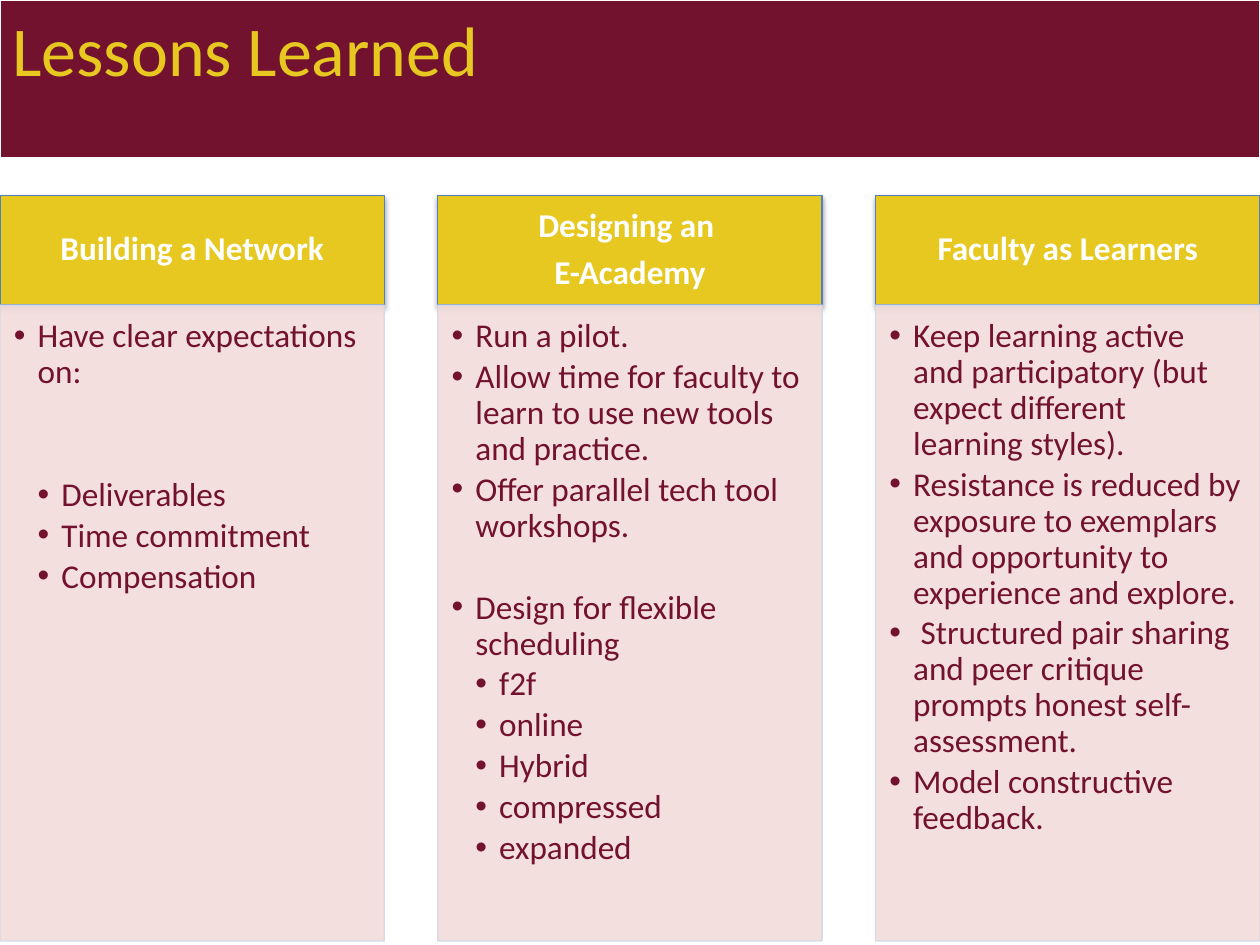
from lxml.etree import SubElement
from pptx import Presentation
from pptx.dml.color import RGBColor as RGB
from pptx.enum.shapes import MSO_SHAPE as Shape
from pptx.enum.text import MSO_ANCHOR as Anchor, PP_ALIGN as Align
from pptx.oxml.ns import qn
from pptx.util import Cm, Pt

TITLE = "Lessons Learned"
# Each point: (level, text, blank lines of space above it)
COLUMNS = [
    (["Building a Network"], [
        (1, "Have clear expectations on:", 0),
        (2, "Deliverables", 2),
        (2, "Time commitment", 0),
        (2, "Compensation", 0),
    ]),
    (["Designing an ", "E-Academy"], [
        (1, "Run a pilot.", 0),
        (1, "Allow time for faculty to learn to use new tools and practice.", 0),
        (1, "Offer parallel tech tool workshops.", 0),
        (1, "Design for flexible scheduling", 1),
        (2, "f2f", 0),
        (2, "online", 0),
        (2, "Hybrid", 0),
        (2, "compressed", 0),
        (2, "expanded", 0),
    ]),
    (["Faculty as Learners"], [
        (1, "Keep learning active and participatory "
            "(but expect different learning styles).", 0),
        (1, "Resistance is reduced by exposure to exemplars "
            "and opportunity to experience and explore.", 0),
        (1, " Structured pair sharing and peer critique "
            "prompts honest self-assessment.", 0),
        (1, "Model constructive feedback.", 0),
    ]),
]
COLORS = {"wine": "73122E", "gold": "E6C820", "pink": "F2DCDB",
          "blue": "4F81BD", "pale": "D0D8E8", "white": "FFFFFF"}
FONT = "Calibri"
WIDE, HIGH = 25.4, 19.05
COL_W, HEAD_TOP, HEAD_H, BODY_H = 7.75, 3.94, 2.21, 12.82
INDENT = 0.48
SIZE, ROW = 19, 23.4


def color(name):
    return RGB.from_string(COLORS[name])


def add_box(slide, place, fill, line, pads, anchor=Anchor.TOP):
    box = slide.shapes.add_shape(Shape.RECTANGLE, *map(Cm, place))
    box.shadow.inherit = False
    box.fill.solid()
    box.fill.fore_color.rgb = color(fill)
    box.line.color.rgb = color(line)
    box.line.width = Pt(0.75)
    frame = box.text_frame
    frame.word_wrap = True
    frame.vertical_anchor = anchor
    (frame.margin_left, frame.margin_top,
     frame.margin_right, frame.margin_bottom) = map(Cm, pads)
    return box


def add_lines(frame, texts, size, tint, align=Align.LEFT, bold=False):
    frame.text = "\n".join(texts)
    for para in frame.paragraphs:
        para.alignment = align
        for run in para.runs:
            run.font.name = FONT
            run.font.size = Pt(size)
            run.font.bold = bold
            run.font.color.rgb = color(tint)
    return frame.paragraphs


def space(paras, after):
    for para in paras:
        para.line_spacing = 0.9
        para.space_after = Pt(after)


def set_alpha(node, share):
    for tint in node.iter(qn("a:srgbClr")):
        SubElement(tint, qn("a:alpha"), val=str(share * 1000))


def add_shadow(box):
    effects = box._element.spPr.find(qn("a:effectLst"))
    shade = SubElement(effects, qn("a:outerShdw"), blurRad=str(Pt(3.1)),
                       dist=str(Pt(1.8)), dir="5400000", rotWithShape="0")
    SubElement(shade, qn("a:srgbClr"), val="000000")
    set_alpha(shade, 35)


def add_bullet(para, level):
    props = para._p.get_or_add_pPr()
    props.set("marL", str(Cm(INDENT * level)))
    props.set("indent", str(-Cm(INDENT)))
    SubElement(props, qn("a:buFont"), typeface="Arial")
    SubElement(props, qn("a:buChar"), char="•")


def add_column(slide, left, heads, points):
    head = add_box(slide, (left, HEAD_TOP, COL_W, HEAD_H), "gold", "blue",
                   (0.38, 0.2, 0.38, 0.2), Anchor.MIDDLE)
    add_shadow(head)
    space(add_lines(head.text_frame, heads, SIZE, "white", Align.CENTER, True), 6.65)

    body = add_box(slide, (left, HEAD_TOP + HEAD_H, COL_W, BODY_H), "pink", "pale",
                   (0.28, 0.28, 0.38, 0.43))
    set_alpha(body._element.spPr, 90)
    paras = add_lines(body.text_frame, [text for _, text, _ in points], SIZE, "wine")
    space(paras, 2.85)
    for para, (level, _, blank) in zip(paras, points):
        para.space_before = Pt(blank * ROW)
        add_bullet(para, level)


def main():
    deck = Presentation()
    deck.slide_width, deck.slide_height = Cm(WIDE), Cm(HIGH)
    slide = deck.slides.add_slide(deck.slide_layouts[6])
    band = add_box(slide, (0, 0, WIDE, 3.18), "wine", "white",
                   (0.25, 0.13, 0.25, 0.13))
    add_lines(band.text_frame, [TITLE], 40, "gold")
    step = (WIDE - COL_W) / (len(COLUMNS) - 1)
    for i, (heads, points) in enumerate(COLUMNS):
        add_column(slide, i * step, heads, points)
    deck.save("out.pptx")


if __name__ == "__main__":
    main()
